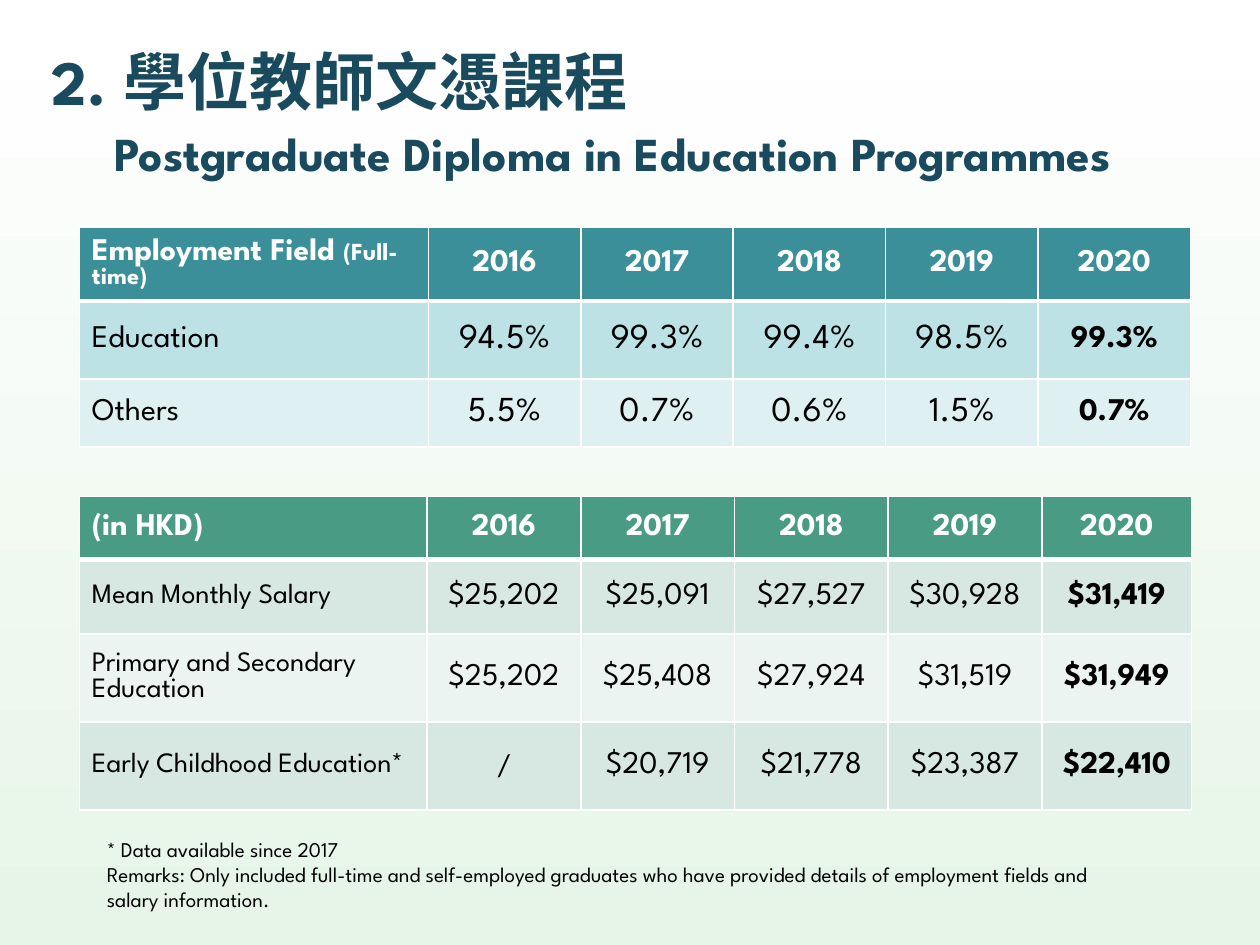
import pptx
import pptx.util
import pptx.oxml
import pptx.oxml.ns
import pptx.dml.color
import pptx.enum.text

Pt = pptx.util.Pt
PP_ALIGN = pptx.enum.text.PP_ALIGN
ANCHOR = pptx.enum.text.MSO_ANCHOR
AUTO_SIZE = pptx.enum.text.MSO_AUTO_SIZE
NS = pptx.oxml.ns.nsdecls("a")

COLORS = {
    "white": "FFFFFF", "black": "000000", "mint": "E7F5E8", "navy": "1A4A5D",
    "teal": "3A8F98", "teal_mid": "BCE2E6", "teal_pale": "DEF0F2",
    "green": "4A9B83", "green_mid": "D6E8E1", "green_pale": "ECF4F1",
}
YEARS = ["2016", "2017", "2018", "2019", "2020"]


def rgb(name):
    return pptx.dml.color.RGBColor.from_string(COLORS[name])


class Deck:
    """Holds the style and current slide; lengths are on a 100 x 75 grid."""
    font = "League Spartan"

    def __init__(self, prs):
        self.prs = prs
        self.unit = prs.slide_width / 100
        self.s = prs.slides.add_slide(prs.slide_layouts[5])

    def size(self, n):
        return round(n * self.unit)

    def place(self, sp, box):
        for name, n in zip(("left", "top", "width", "height"), box):
            setattr(sp, name, self.size(n))

    def background(self, top, bottom):
        fill = self.s.background.fill
        fill.gradient()
        fill.gradient_angle = 270
        for stop, name, pos in zip(fill.gradient_stops, (top, bottom), (0, 1)):
            stop.color.rgb = rgb(name)
            stop.position = pos

    def run(self, p, text, size, color="black", bold=False, font=None):
        r = p.add_run()
        r.text = text
        style = {"size": Pt(size), "bold": bold, "name": font or self.font}
        for name, value in style.items():
            setattr(r.font, name, value)
        r.font.color.rgb = rgb(color)

    def title(self, box, first, second):
        sp = self.s.shapes.title
        self.place(sp, box)
        tf = sp.text_frame
        for name, value in {"vertical_anchor": ANCHOR.TOP, "word_wrap": True,
                            "auto_size": AUTO_SIZE.NONE}.items():
            setattr(tf, name, value)
        p = tf.paragraphs[0]
        p.alignment = PP_ALIGN.LEFT
        p.line_spacing = 0.87
        p._p.get_or_add_pPr().append(pptx.oxml.parse_xml(
            f'<a:tabLst {NS}><a:tab pos="{self.size(5)}" algn="l"/></a:tabLst>'))
        self.run(p, first, 36, "navy", True)
        p.add_line_break()
        self.run(p, "\t", 36, "navy", True)
        self.run(p, second, 27, "navy", True)

    def cell(self, cell, runs, fill, centred, top, bottom):
        tcPr = cell._tc.get_or_add_tcPr()
        for side, width in {"L": 1, "R": 1, "T": top, "B": bottom}.items():
            tcPr.append(pptx.oxml.parse_xml(
                f'<a:ln{side} {NS} w="{Pt(width)}"><a:solidFill><a:srgbClr '
                f'val="{COLORS["white"]}"/></a:solidFill></a:ln{side}>'))
        cell.fill.solid()
        cell.fill.fore_color.rgb = rgb(fill)
        cell.vertical_anchor = ANCHOR.MIDDLE
        p = cell.text_frame.paragraphs[0]
        p.alignment = PP_ALIGN.CENTER if centred else PP_ALIGN.LEFT
        for run in runs:
            self.run(p, **run)

    def table(self, box, cols, rows, tint, head, body, label_size, value_size):
        left, top, width, height = map(self.size, box)
        table = self.s.shapes.add_table(
            len(rows), len(cols), left, top, width, height).table
        for items, name, lengths in ((table.columns, "width", cols),
                                     (table.rows, "height", rows)):
            for item, n in zip(items, lengths):
                setattr(item, name, self.size(n))
        # Header row
        white = {"size": 18, "color": "white", "bold": True}
        heads = [[{**white, **part} for part in head]]
        heads += [[{**white, "text": year}] for year in YEARS]
        for c, runs in enumerate(heads):
            self.cell(table.cell(0, c), runs, tint, c > 0, 1, 3)
        # Body rows: label, values, bold latest year
        for i, texts in enumerate(body, 1):
            fill = tint + ("_mid" if i % 2 else "_pale")
            for c, text in enumerate(texts):
                latest = c == len(YEARS)
                run = {"text": text, "bold": latest,
                       "size": 18 if latest else value_size if c else label_size,
                       "font": "Calibri" if text == "/" else None}
                self.cell(table.cell(i, c), [run], fill, c > 0,
                          3 if i == 1 else 1, 1)

    def textbox(self, box, lines):
        sp = self.s.shapes.add_textbox(*map(self.size, box))
        tf = sp.text_frame
        tf.word_wrap = True
        tf.auto_size = AUTO_SIZE.SHAPE_TO_FIT_TEXT
        for i, line in enumerate(lines):
            p = tf.add_paragraph() if i else tf.paragraphs[0]
            self.run(p, line, 12)


def main():
    prs = pptx.Presentation()
    prs.slide_width = pptx.util.Inches(10)
    prs.slide_height = pptx.util.Inches(7.5)
    deck = Deck(prs)
    deck.background("white", "mint")
    deck.title((3.1, 3.7, 96.5, 15), "2. 學位教師文憑課程",
               "Postgraduate Diploma in Education Programmes")

    # Employment fields
    deck.table((6.3, 18, 88.2, 17.5), [27.7] + [12.1] * 5, [5.9, 6.2, 5.4], "teal",
               [{"text": "Employment Field "}, {"text": "(Full-time)", "size": 14}],
               [["Education", "94.5%", "99.3%", "99.4%", "98.5%", "99.3%"],
                ["Others", "5.5%", "0.7%", "0.6%", "1.5%", "0.7%"]], 18, 20)

    # Monthly salaries
    deck.table((6.3, 39.4, 88.2, 24.9), [27.6] + [12.2] * 4 + [11.9],
               [5, 5.9, 7, 7], "green", [{"text": "(in HKD)"}],
               [["Mean Monthly Salary",
                 "$25,202", "$25,091", "$27,527", "$30,928", "$31,419"],
                ["Primary and Secondary Education",
                 "$25,202", "$25,408", "$27,924", "$31,519", "$31,949"],
                ["Early Childhood Education*",
                 "/", "$20,719", "$21,778", "$23,387", "$22,410"]], 16, 18)

    # Remarks
    deck.textbox((7.5, 65.9, 79.9, 7.1), [
        "* Data available since 2017",
        "Remarks: Only included full-time and self-employed graduates who have "
        "provided details of employment fields and salary information."])
    prs.save("out.pptx")


if __name__ == "__main__":
    main()
